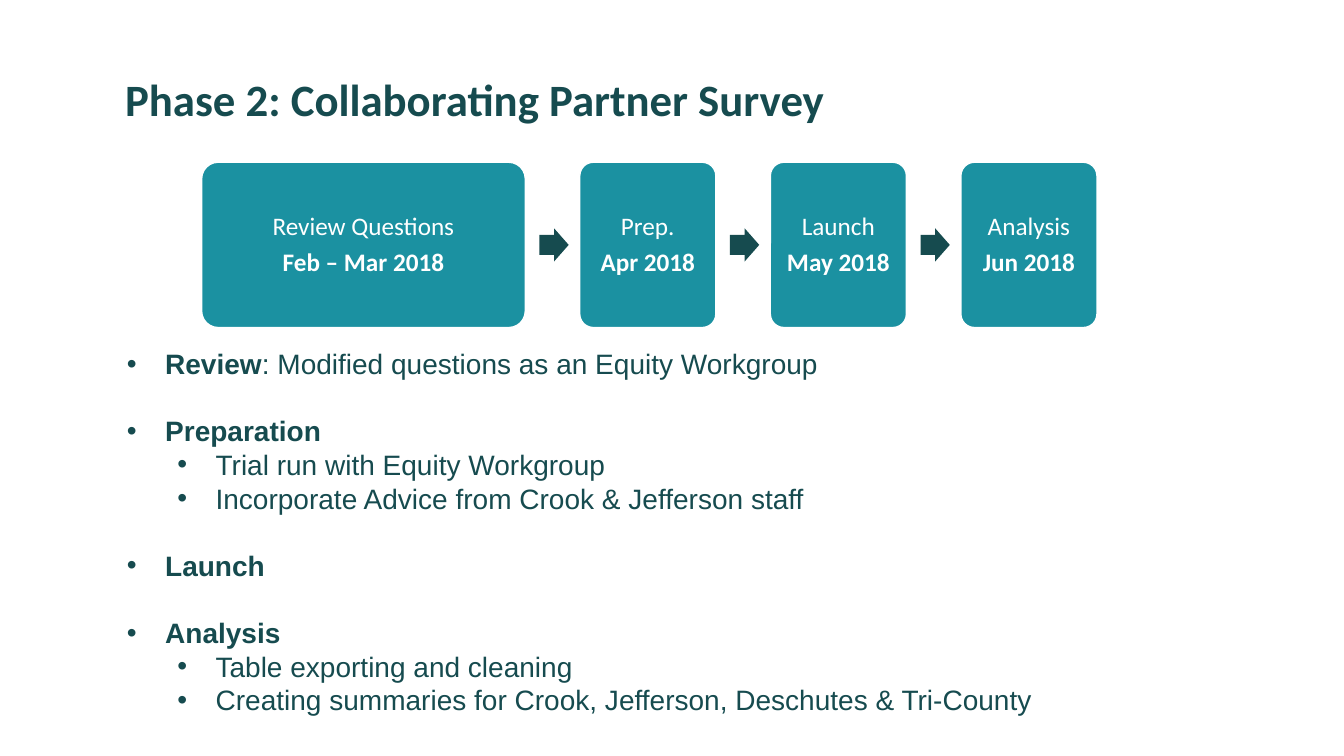
from dataclasses import dataclass

from lxml import etree
from pptx import Presentation
from pptx.dml.color import RGBColor
from pptx.enum.shapes import MSO_SHAPE
from pptx.enum.text import MSO_ANCHOR, PP_ALIGN
from pptx.oxml.ns import qn
from pptx.util import Inches, Pt

ROUNDED, ARROW = MSO_SHAPE.ROUNDED_RECTANGLE, MSO_SHAPE.RIGHT_ARROW
LEFT, CENTER = PP_ALIGN.LEFT, PP_ALIGN.CENTER
MIDDLE, BOTTOM = MSO_ANCHOR.MIDDLE, MSO_ANCHOR.BOTTOM


@dataclass(frozen=True)
class Theme:
    dark: RGBColor = RGBColor(0x16, 0x4B, 0x4F)
    teal: RGBColor = RGBColor(0x1B, 0x91, 0xA1)
    white: RGBColor = RGBColor(0xFF, 0xFF, 0xFF)
    heading_font: str = "Calibri"
    body_font: str = "Arial"
    title_size: Pt = Pt(32)
    step_size: Pt = Pt(18)
    body_size: Pt = Pt(20)


THEME = Theme()
STEPS = [  # label, dates, width in inches
    ("Review Questions", "Feb – Mar 2018", 3.21),
    ("Prep.", "Apr 2018", 1.35),
    ("Launch", "May 2018", 1.35),
    ("Analysis", "Jun 2018", 1.35),
]
TOPICS = [  # bold lead, rest of the line, sub-points
    ("Review", ": Modified questions as an Equity Workgroup", []),
    ("Preparation", "", ["Trial run with Equity Workgroup",
                         "Incorporate Advice from Crook & Jefferson staff"]),
    ("Launch", "", []),
    ("Analysis", "", ["Table exporting and cleaning",
                      "Creating summaries for Crook, Jefferson, Deschutes & Tri-County"]),
]


def set_attrs(obj, **values):
    for name, value in values.items():
        setattr(obj, name, value)


def add_run(p, text, font, size, color, bold=False):
    r = p.add_run()
    r.text = text
    set_attrs(r.font, name=font, size=size, bold=bold)
    r.font.color.rgb = color


def add_block(s, kind, left, top, width, height, fill, adjustments):
    """Add a preset shape with a plain fill, no outline and no shadow."""
    sp = s.shapes.add_shape(kind, Inches(left), Inches(top), Inches(width), Inches(height))
    sp.shadow.inherit = False
    sp.fill.solid()
    sp.fill.fore_color.rgb = fill
    sp.line.fill.background()
    for i, value in enumerate(adjustments):
        sp.adjustments[i] = value
    return sp


def add_title(s, text):
    sp = s.shapes.title
    set_attrs(sp, left=Inches(1.14), top=Inches(0.26), width=Inches(9.58), height=Inches(1.04))
    set_attrs(sp.text_frame, vertical_anchor=BOTTOM, word_wrap=True)
    p = sp.text_frame.paragraphs[0]
    set_attrs(p, alignment=LEFT, line_spacing=0.9)
    add_run(p, text, THEME.heading_font, THEME.title_size, THEME.dark, True)


def add_step(s, left, top, width, height, label, dates):
    sp = add_block(s, ROUNDED, left, top, width, height, THEME.teal, [0.1])
    sp.line.color.rgb = THEME.white
    sp.line.width = Pt(1)
    tf = sp.text_frame
    inset = Inches(0.1)
    set_attrs(tf, word_wrap=True, vertical_anchor=MIDDLE, margin_left=inset,
              margin_right=inset, margin_top=inset, margin_bottom=inset)
    for p, text, bold, before in ((tf.paragraphs[0], label, False, 0),
                                  (tf.add_paragraph(), dates, True, 6.3)):
        set_attrs(p, alignment=CENTER, line_spacing=0.9, space_before=Pt(before))
        add_run(p, text, THEME.heading_font, THEME.step_size, THEME.white, bold)


def add_timeline(s, steps):
    left, top, height, gap = 2.0, 1.61, 1.64, 0.54
    arrow_w, arrow_h = 0.29, 0.33
    for i, (label, dates, width) in enumerate(steps):
        if i:
            add_block(s, ARROW, left - gap + 0.14, top + (height - arrow_h) / 2,
                      arrow_w, arrow_h, THEME.dark, [0.6, 0.5])
        add_step(s, left, top, width, height, label, dates)
        left += width + gap


def add_bullet(p, level):
    p.level = level
    pPr = p._p.get_or_add_pPr()
    pPr.set("marL", str(Inches(0.38 + 0.5 * level)))
    pPr.set("indent", str(Inches(-0.38)))
    etree.SubElement(pPr, qn("a:buFont")).set("typeface", THEME.body_font)
    etree.SubElement(pPr, qn("a:buChar")).set("char", "•")


def add_topics(s, topics):
    tf = s.shapes.add_textbox(Inches(1.16), Inches(3.39), Inches(11.75), Inches(3.79)).text_frame
    tf.word_wrap = True
    line = Pt(24)
    for i, (lead, rest, points) in enumerate(topics):
        rows = [(0, [(lead, True), (rest, False)])]
        rows += [(1, [(point, False)]) for point in points]
        for level, runs in rows:
            first = i == 0 and level == 0
            p = tf.paragraphs[0] if first else tf.add_paragraph()
            add_bullet(p, level)
            set_attrs(p, line_spacing=line, space_before=Pt(0) if first or level else line)
            for text, bold in runs:
                if text:
                    add_run(p, text, THEME.body_font, THEME.body_size, THEME.dark, bold)


def main():
    prs = Presentation()
    set_attrs(prs, slide_width=Inches(13.33), slide_height=Inches(7.5))
    s = prs.slides.add_slide(prs.slide_layouts[5])
    add_title(s, "Phase 2: Collaborating Partner Survey")
    add_topics(s, TOPICS)
    add_timeline(s, STEPS)
    prs.save("out.pptx")


if __name__ == "__main__":
    main()
